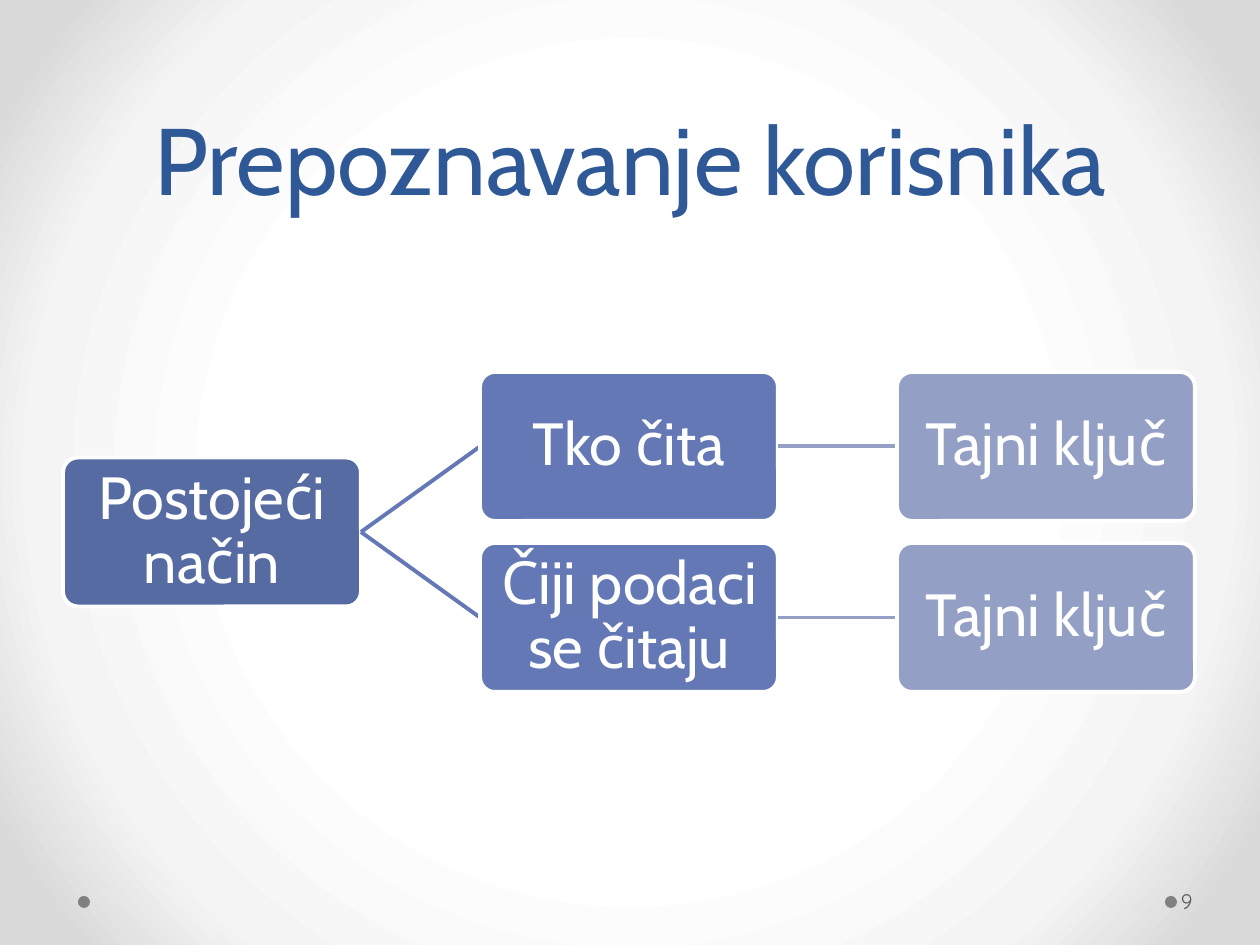
from lxml import etree
from pptx import Presentation
from pptx.dml.color import RGBColor
from pptx.enum.shapes import MSO_CONNECTOR, MSO_SHAPE
from pptx.enum.text import MSO_ANCHOR, PP_ALIGN
from pptx.oxml.ns import qn
from pptx.util import Emu, Pt

CENTER, LEFT = PP_ALIGN.CENTER, PP_ALIGN.LEFT
MIDDLE, BOTTOM = MSO_ANCHOR.MIDDLE, MSO_ANCHOR.BOTTOM
STRAIGHT = MSO_CONNECTOR.STRAIGHT
ROUNDED, OVAL = MSO_SHAPE.ROUNDED_RECTANGLE, MSO_SHAPE.OVAL

TITLE = "Prepoznavanje korisnika"
PAGE_NUMBER = "9"
ROOT = "Postojeći način"
BRANCHES = [("Tko čita", "Tajni ključ"), ("Čiji podaci se čitaju", "Tajni ključ")]
LEVEL_COLORS = ["576BA3", "6378B5", "949FC6"]
BACKGROUND_STOPS = [(50, "FFFFFF"), (76, "F4F4F4"), (92, "DADADA")]
DOT_LEFTS = [78, 1165]

BOX_WIDTH, BOX_HEIGHT = 298, 149
COLUMN_GAP, ROW_GAP = 119, 22
TREE_LEFT, TREE_TOP = 63, 372


def px(value):
    return Emu(round(value * 914400 / 126))


def color(value):
    return RGBColor.from_string(value)


def write(shape, text, size, font="Cabin", fill="FFFFFF", align=CENTER,
          anchor=MIDDLE, spacing=None, insets=(13, 6, 13, 6)):
    frame = shape.text_frame
    frame.word_wrap = True
    frame.vertical_anchor = anchor
    (frame.margin_left, frame.margin_top,
     frame.margin_right, frame.margin_bottom) = map(px, insets)
    paragraph = frame.paragraphs[0]
    paragraph.alignment = align
    paragraph.line_spacing = spacing
    run = paragraph.add_run()
    run.text = text
    run.font.name = font
    run.font.size = Pt(size)
    run.font.color.rgb = color(fill)


def add_filled(kind, left, top, width, height, fill):
    shape = slide.shapes.add_shape(kind, px(left), px(top), px(width), px(height))
    shape.shadow.inherit = False
    shape.fill.solid()
    shape.fill.fore_color.rgb = color(fill)
    shape.line.fill.background()
    return shape


def add_box(text, level, top):
    left = TREE_LEFT + level * (BOX_WIDTH + COLUMN_GAP)
    box = add_filled(ROUNDED, left, top, BOX_WIDTH, BOX_HEIGHT, LEVEL_COLORS[level])
    box.adjustments[0] = 0.1
    box.line.color.rgb = color("FFFFFF")
    box.line.width = Pt(2.25)
    write(box, text, 34, spacing=0.9, insets=(3, 3, 3, 3))


def add_link(level, start_top, end_top):
    end = TREE_LEFT + level * (BOX_WIDTH + COLUMN_GAP)
    middle = BOX_HEIGHT / 2
    link = slide.shapes.add_connector(
        STRAIGHT, px(end - COLUMN_GAP), px(start_top + middle),
        px(end), px(end_top + middle))
    link.line.color.rgb = color(LEVEL_COLORS[level])
    link.line.width = Pt(2.25)
    etree.SubElement(link.element.spPr, qn("a:effectLst"))


def paint_background():
    slide.background.fill.gradient()
    gradient = slide.element.find(".//" + qn("a:gradFill"))
    for child in list(gradient):
        gradient.remove(child)
    stops = etree.SubElement(gradient, qn("a:gsLst"))
    for position, value in BACKGROUND_STOPS:
        stop = etree.SubElement(stops, qn("a:gs"), pos=str(position * 1000))
        etree.SubElement(stop, qn("a:srgbClr"), val=value)
    circle = etree.SubElement(gradient, qn("a:path"), path="circle")
    etree.SubElement(circle, qn("a:fillToRect"), l="50000", t="50000", r="50000", b="50000")


presentation = Presentation()
presentation.slide_width, presentation.slide_height = px(1260), px(945)
slide = presentation.slides.add_slide(presentation.slide_layouts[6])
paint_background()

for dot_left in DOT_LEFTS:
    add_filled(OVAL, dot_left, 896, 12, 12, "808080")

title = slide.shapes.add_textbox(px(63), px(0), px(1134), px(220))
write(title, TITLE, 54, fill="2F5897", anchor=BOTTOM, spacing=Pt(58))
number = slide.shapes.add_textbox(px(1177), px(876), px(77), px(50))
write(number, PAGE_NUMBER, 12, font="Quicksand", fill="595959", align=LEFT,
      insets=(4, 6, 6, 6))

row_step = BOX_HEIGHT + ROW_GAP
root_top = TREE_TOP + row_step * (len(BRANCHES) - 1) / 2
add_box(ROOT, 0, root_top)
for row, branch in enumerate(BRANCHES):
    top = TREE_TOP + row * row_step
    for level, text in enumerate(branch, start=1):
        add_link(level, root_top if level == 1 else top, top)
        add_box(text, level, top)

presentation.save("out.pptx")
